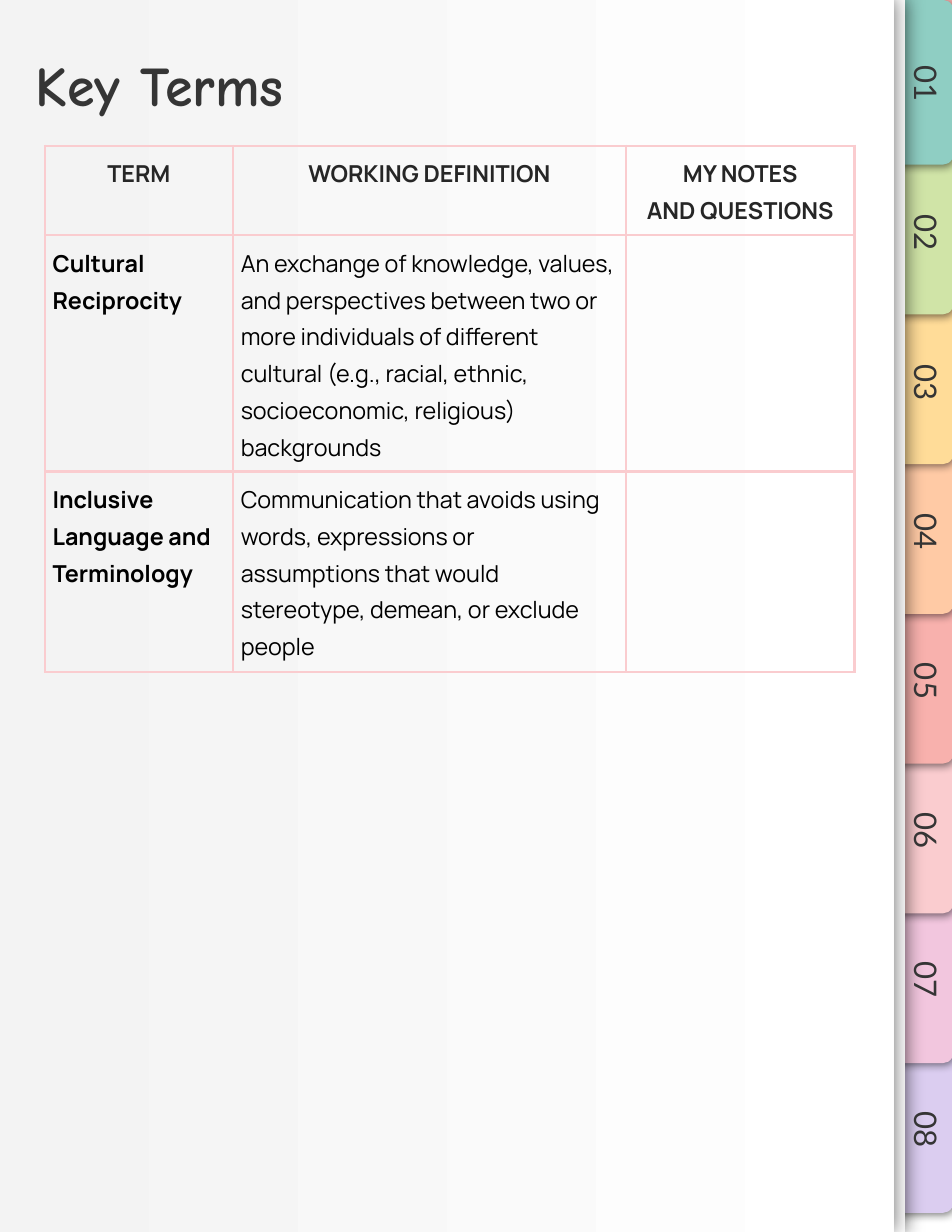
from dataclasses import dataclass

from lxml import etree
from pptx import Presentation
from pptx.dml.color import RGBColor
from pptx.enum import shapes, text
from pptx.oxml import ns
from pptx.util import Inches, Pt


@dataclass(frozen=True)
class Theme:
    backdrop: str = "F8B1AD"
    paper: str = "FFFFFF"
    paper_shade: str = "F3F3F3"
    ink: str = "353535"
    header_ink: str = "262626"
    body_ink: str = "000000"
    border: str = "FACCCF"
    tabs: tuple = ("8FCEC3", "D0E4A7", "FFDC98", "FFCAA5",
                   "F8B1AD", "FACCCF", "F2C6DE", "DBCDF0")
    title_font: str = "Comic Neue"
    tab_font: str = "Lato"
    table_font: str = "Manrope"
    title_size: int = 36
    tab_size: int = 20
    table_size: int = 15
    border_width: float = 1.5


THEME = Theme()
TAB_PITCH = 1.337
LABEL_PITCH = 1.334
COLUMN_WIDTHS = (1.68, 3.51, 2.04)
ROW_HEIGHTS = (0.8, 2.11, 1.79)
TERMS = (
    ("TERM", "WORKING DEFINITION", "MY NOTES\nAND QUESTIONS"),
    ("Cultural Reciprocity",
     "An exchange of knowledge, values, and perspectives between two or more "
     "individuals of different cultural (e.g., racial, ethnic, socioeconomic, "
     "religious) backgrounds", ""),
    ("Inclusive Language and Terminology",
     "Communication that avoids using words, expressions or assumptions that "
     "would stereotype, demean, or exclude people", ""),
)


def rgb(color):
    return RGBColor.from_string(color)


def style_font(font, name, size, color, bold=False):
    font.name = name
    font.size = Pt(size)
    font.bold = bold
    font.color.rgb = rgb(color)


def add_block(slide, kind, box, color):
    block = slide.shapes.add_shape(kind, *map(Inches, box))
    block.shadow.inherit = False
    block.fill.solid()
    block.fill.fore_color.rgb = rgb(color)
    block.line.fill.background()
    return block


def cast_shadow(block, blur, distance, angle):
    effects = block._element.spPr.find(ns.qn("a:effectLst"))
    shadow = etree.SubElement(
        effects, ns.qn("a:outerShdw"), blurRad=str(Pt(blur)),
        dist=str(Pt(distance)), dir=str(angle * 60000),
        algn="bl", rotWithShape="0")
    color = etree.SubElement(shadow, ns.qn("a:srgbClr"), val="000000")
    etree.SubElement(color, ns.qn("a:alpha"), val="50000")


def add_tab(slide, index, color):
    box = (7.51, 0.47 + index * TAB_PITCH, 1.47, 0.53)
    tab = add_block(slide, shapes.MSO_SHAPE.ROUND_2_SAME_RECTANGLE, box, color)
    tab.rotation = 90
    cast_shadow(tab, 5.6, 1.5, 61)


def add_page(slide, left):
    page = add_block(slide, shapes.MSO_SHAPE.RECTANGLE,
                     (left, 0, 7.98, 11), THEME.paper)
    cast_shadow(page, 12.4, 0.8, 0)
    return page


def shade_page(page):
    page.fill.gradient()
    page.fill.gradient_angle = 0
    for stop, color in zip(page.fill.gradient_stops,
                           (THEME.paper_shade, THEME.paper)):
        stop.color.rgb = rgb(color)


def add_label(slide, box, words):
    label = slide.shapes.add_textbox(*map(Inches, box))
    frame = label.text_frame
    frame.word_wrap = True
    frame.margin_left = frame.margin_right = Inches(0.1)
    frame.margin_top = frame.margin_bottom = Inches(0.1)
    frame.text = words
    return label


def add_tab_number(slide, index):
    box = (7.6, 0.43 + index * LABEL_PITCH, 1.44, 0.63)
    number = add_label(slide, box, f"{index + 1:02}")
    number.rotation = 90
    number.text_frame.vertical_anchor = text.MSO_ANCHOR.BOTTOM
    paragraph = number.text_frame.paragraphs[0]
    paragraph.alignment = text.PP_ALIGN.CENTER
    style_font(paragraph.runs[0].font, THEME.tab_font, THEME.tab_size, THEME.ink)


def add_title(slide):
    title = add_label(slide, (0.22, 0.35, 7.12, 0.63), "Key Terms")
    title.text_frame.vertical_anchor = text.MSO_ANCHOR.TOP
    style_font(title.text_frame.paragraphs[0].runs[0].font,
               THEME.title_font, THEME.title_size, THEME.ink, True)


def outline_cell(cell):
    properties = cell._tc.get_or_add_tcPr()
    for position, side in enumerate(("lnL", "lnR", "lnT", "lnB")):
        line = etree.Element(ns.qn(f"a:{side}"), w=str(Pt(THEME.border_width)))
        fill = etree.SubElement(line, ns.qn("a:solidFill"))
        etree.SubElement(fill, ns.qn("a:srgbClr"), val=THEME.border)
        properties.insert(position, line)


def fill_cell(cell, words, is_header, is_bold):
    cell.margin_left = cell.margin_right = Inches(0.07)
    cell.margin_top = cell.margin_bottom = Inches(0.07)
    cell.fill.background()
    outline_cell(cell)
    cell.text_frame.text = words
    color = THEME.header_ink if is_header else THEME.body_ink
    for paragraph in cell.text_frame.paragraphs:
        paragraph.line_spacing = 1.15
        if is_header:
            paragraph.alignment = text.PP_ALIGN.CENTER
        for run in paragraph.runs:
            style_font(run.font, THEME.table_font, THEME.table_size, color, is_bold)


def add_terms_table(slide):
    table = slide.shapes.add_table(
        len(TERMS), len(COLUMN_WIDTHS), Inches(0.4), Inches(1.3),
        Inches(sum(COLUMN_WIDTHS)), Inches(sum(ROW_HEIGHTS))).table
    table.first_row = table.horz_banding = False
    for column, width in zip(table.columns, COLUMN_WIDTHS):
        column.width = Inches(width)
    for row, height in zip(table.rows, ROW_HEIGHTS):
        row.height = Inches(height)
    for r, entries in enumerate(TERMS):
        for c, words in enumerate(entries):
            fill_cell(table.cell(r, c), words, r == 0, r == 0 or c == 0)


def main():
    deck = Presentation()
    deck.slide_width, deck.slide_height = Inches(8.5), Inches(11)
    slide = deck.slides.add_slide(deck.slide_layouts[6])
    slide.background.fill.solid()
    slide.background.fill.fore_color.rgb = rgb(THEME.backdrop)

    edge = add_block(slide, shapes.MSO_SHAPE.RECTANGLE,
                     (8.08, 8.58, 0.42, 2.42), THEME.paper)
    edge.line.color.rgb = rgb(THEME.paper)
    edge.line.width = Pt(0.75)
    for index, color in reversed(list(enumerate(THEME.tabs))):
        add_tab(slide, index, color)
    add_page(slide, 0.1)
    shade_page(add_page(slide, 0))
    for index in range(len(THEME.tabs)):
        add_tab_number(slide, index)
    add_title(slide)
    add_terms_table(slide)
    deck.save("out.pptx")


if __name__ == "__main__":
    main()
